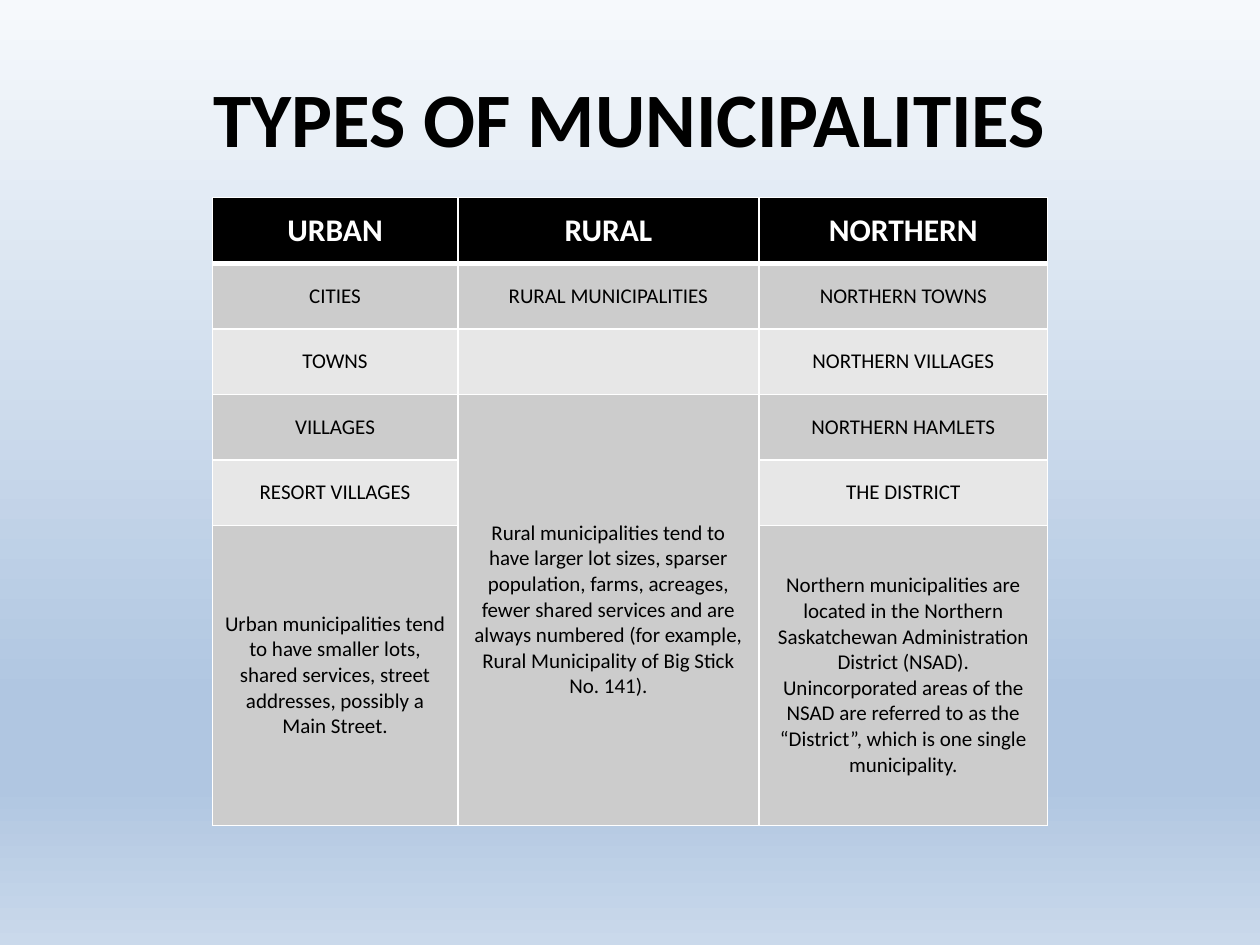
from dataclasses import dataclass

from lxml import etree
from pptx import Presentation
from pptx import util as u
from pptx.dml.color import RGBColor
from pptx.enum import text
from pptx.oxml import ns


@dataclass(frozen=True)
class Theme:
    font: str = "Calibri"
    ink: str = "000000"
    paper: str = "FFFFFF"
    bands: tuple = ("CCCCCC", "E7E7E7")
    sky: tuple = ((0, "F6F9FC"), (74, "B0C6E1"), (83, "B0C6E1"), (100, "CAD9EB"))
    title_size: int = 44
    header_size: int = 18
    body_size: int = 12
    thin: int = 1
    thick: int = 3


THEME = Theme()

COLUMN_WIDTHS = (4.95, 6.07, 5.82)
ROW_HEIGHTS = (1.33, 1.32, 1.32, 1.32, 1.32, 6.05)
URBAN_NOTE = (
    "Urban municipalities tend to have smaller lots, shared services, "
    "street addresses, possibly a Main Street."
)
RURAL_NOTE = (
    "Rural municipalities tend to have larger lot sizes, sparser population, "
    "farms, acreages, fewer shared services and are always numbered "
    "(for example, Rural Municipality of Big Stick No. 141)."
)
NORTHERN_NOTE = (
    "Northern municipalities are located in the Northern Saskatchewan "
    "Administration District (NSAD). Unincorporated areas of the NSAD are "
    "referred to as the “District”, which is one single municipality."
)
MUNICIPALITIES = (
    ("URBAN", "RURAL", "NORTHERN"),
    ("CITIES", "RURAL MUNICIPALITIES", "NORTHERN TOWNS"),
    ("TOWNS", "", "NORTHERN VILLAGES"),
    ("VILLAGES", RURAL_NOTE, "NORTHERN HAMLETS"),
    ("RESORT VILLAGES", "", "THE DISTRICT"),
    (URBAN_NOTE, "", NORTHERN_NOTE),
)


def add_child(parent, tag, **attributes):
    return etree.SubElement(parent, ns.qn(tag), attributes)


def paint_sky(slide):
    """Fill the background with the vertical gradient of the theme."""
    fill = slide.background.fill
    fill.gradient()
    fill.gradient_angle = 270
    stops = slide.element.find(".//" + ns.qn("a:gsLst"))
    for stop in list(stops):
        stops.remove(stop)
    for percent, color in THEME.sky:
        stop = add_child(stops, "a:gs", pos=str(percent * 1000))
        add_child(stop, "a:srgbClr", val=color)


def write(frame, words, size, color, bold=False):
    """Put one centred paragraph into a text frame."""
    paragraph = frame.paragraphs[0]
    paragraph.alignment = text.PP_ALIGN.CENTER
    if not words:
        return
    run = paragraph.add_run()
    run.text = words
    font_format = {"name": THEME.font, "size": u.Pt(size), "bold": bold}
    for attribute, value in font_format.items():
        setattr(run.font, attribute, value)
    run.font.color.rgb = RGBColor.from_string(color)


def add_title(slide, words):
    box = slide.shapes.add_textbox(u.Cm(1.27), u.Cm(0.76), u.Cm(22.86), u.Cm(3.18))
    frame_format = {"word_wrap": True, "vertical_anchor": text.MSO_ANCHOR.MIDDLE}
    for attribute, value in frame_format.items():
        setattr(box.text_frame, attribute, value)
    write(box.text_frame, words, THEME.title_size, THEME.ink, bold=True)


def draw_borders(cell, top, bottom):
    properties = cell._tc.get_or_add_tcPr()
    widths = {"L": THEME.thin, "R": THEME.thin, "T": top, "B": bottom}
    for side, points in widths.items():
        line = add_child(properties, f"a:ln{side}", w=str(u.Pt(points)))
        add_child(add_child(line, "a:solidFill"), "a:srgbClr", val=THEME.paper)


def style_cell(cell, row):
    """Give a cell its border and fill; the header rule is thicker."""
    draw_borders(
        cell,
        top=THEME.thick if row == 1 else THEME.thin,
        bottom=THEME.thick if row == 0 else THEME.thin,
    )
    cell.fill.solid()
    band = THEME.bands[(row - 1) % 2] if row else THEME.ink
    cell.fill.fore_color.rgb = RGBColor.from_string(band)
    cell.vertical_anchor = text.MSO_ANCHOR.MIDDLE


def add_municipality_table(slide):
    table = slide.shapes.add_table(
        len(ROW_HEIGHTS), len(COLUMN_WIDTHS), u.Cm(4.28), u.Cm(3.98),
        u.Cm(sum(COLUMN_WIDTHS)), u.Cm(sum(ROW_HEIGHTS)),
    ).table
    for column, width in zip(table.columns, COLUMN_WIDTHS):
        column.width = u.Cm(width)
    for table_row, height in zip(table.rows, ROW_HEIGHTS):
        table_row.height = u.Cm(height)
    for row, entries in enumerate(MUNICIPALITIES):
        is_header = row == 0
        size = THEME.header_size if is_header else THEME.body_size
        color = THEME.paper if is_header else THEME.ink
        for column, words in enumerate(entries):
            cell = table.cell(row, column)
            style_cell(cell, row)
            write(cell.text_frame, words, size, color, bold=is_header)
    table.cell(3, 1).merge(table.cell(5, 1))


def main():
    deck = Presentation()
    deck.slide_width, deck.slide_height = u.Cm(25.4), u.Cm(19.05)
    slide = deck.slides.add_slide(deck.slide_layouts[6])
    paint_sky(slide)
    add_title(slide, "TYPES OF MUNICIPALITIES")
    add_municipality_table(slide)
    deck.save("out.pptx")


if __name__ == "__main__":
    main()
